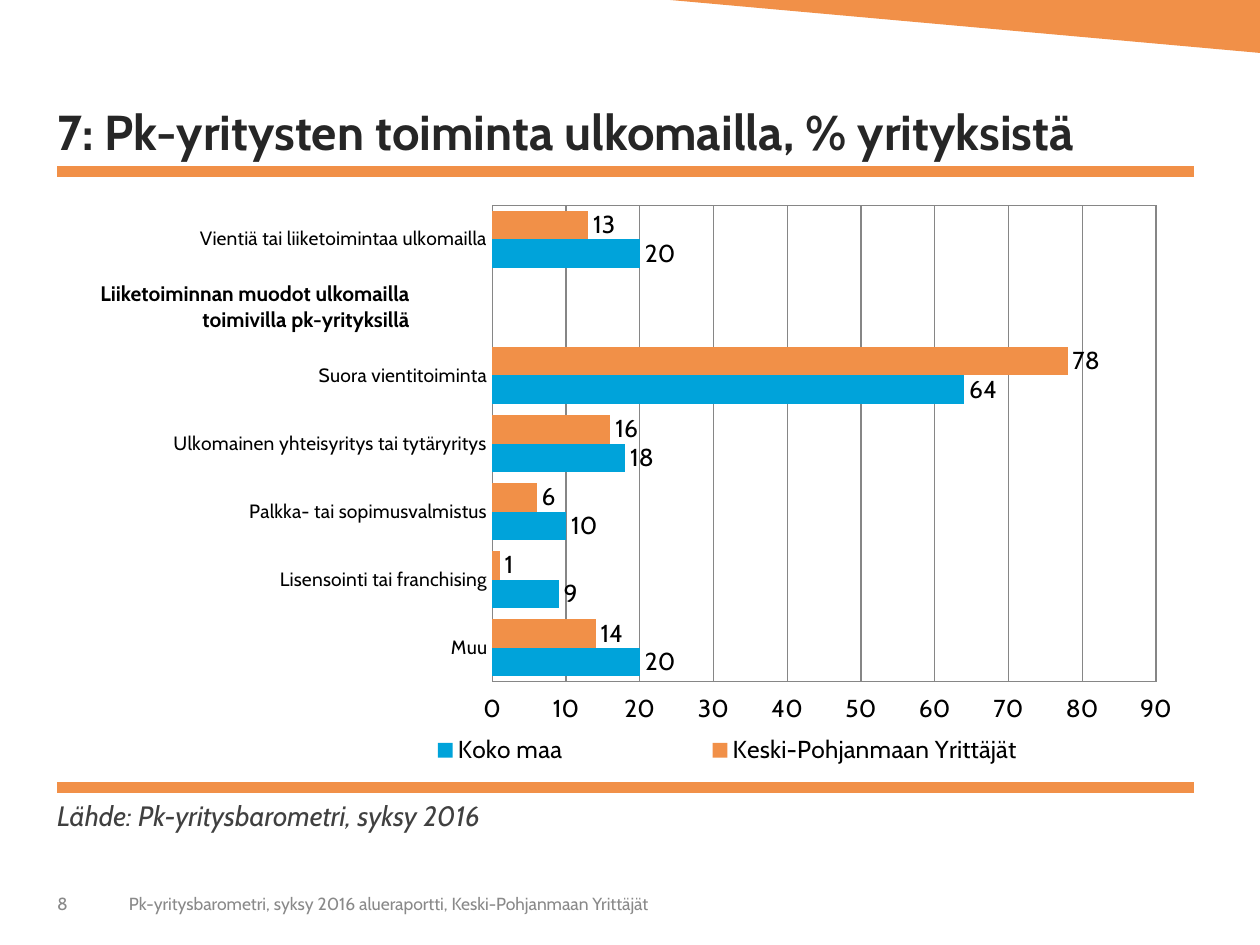
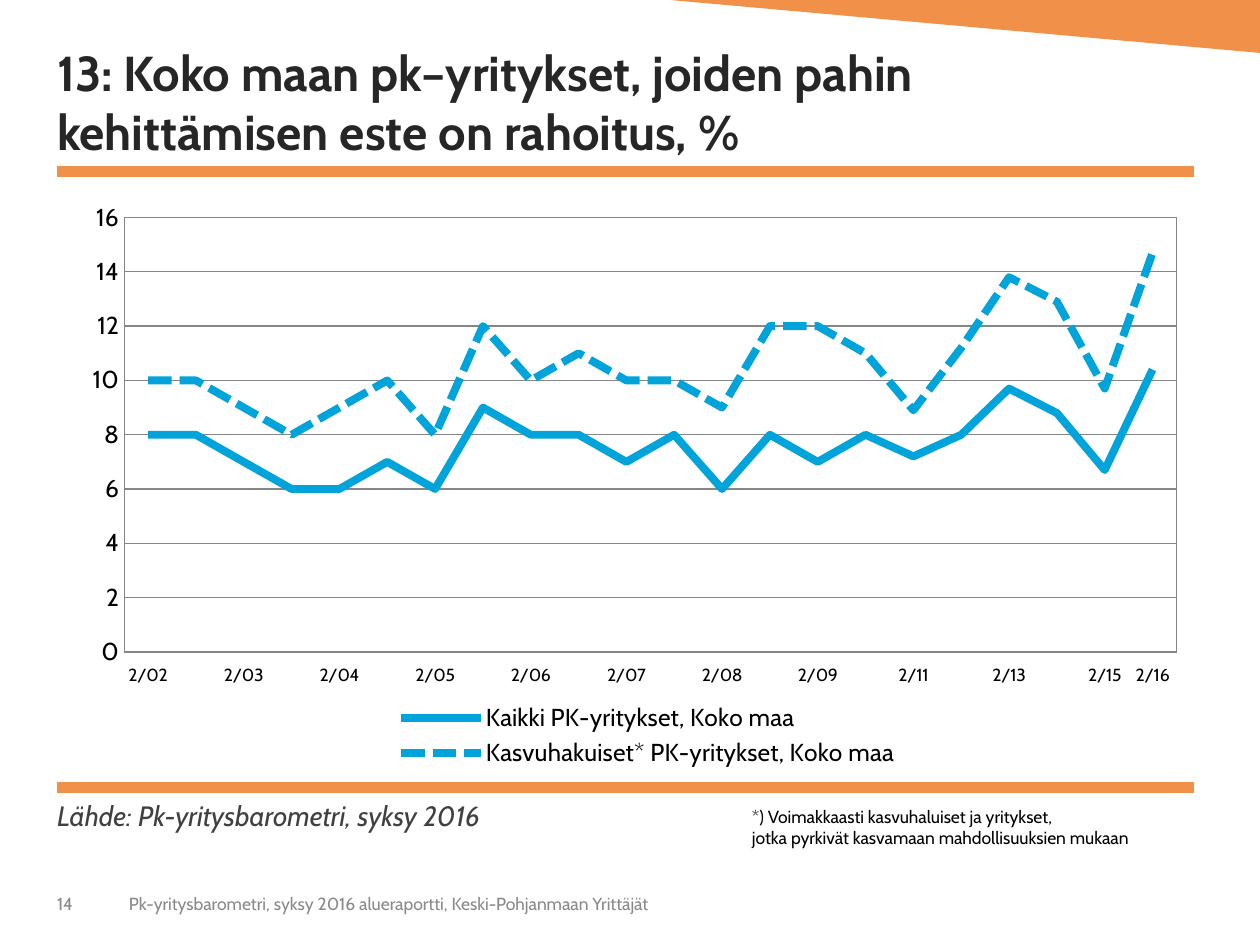
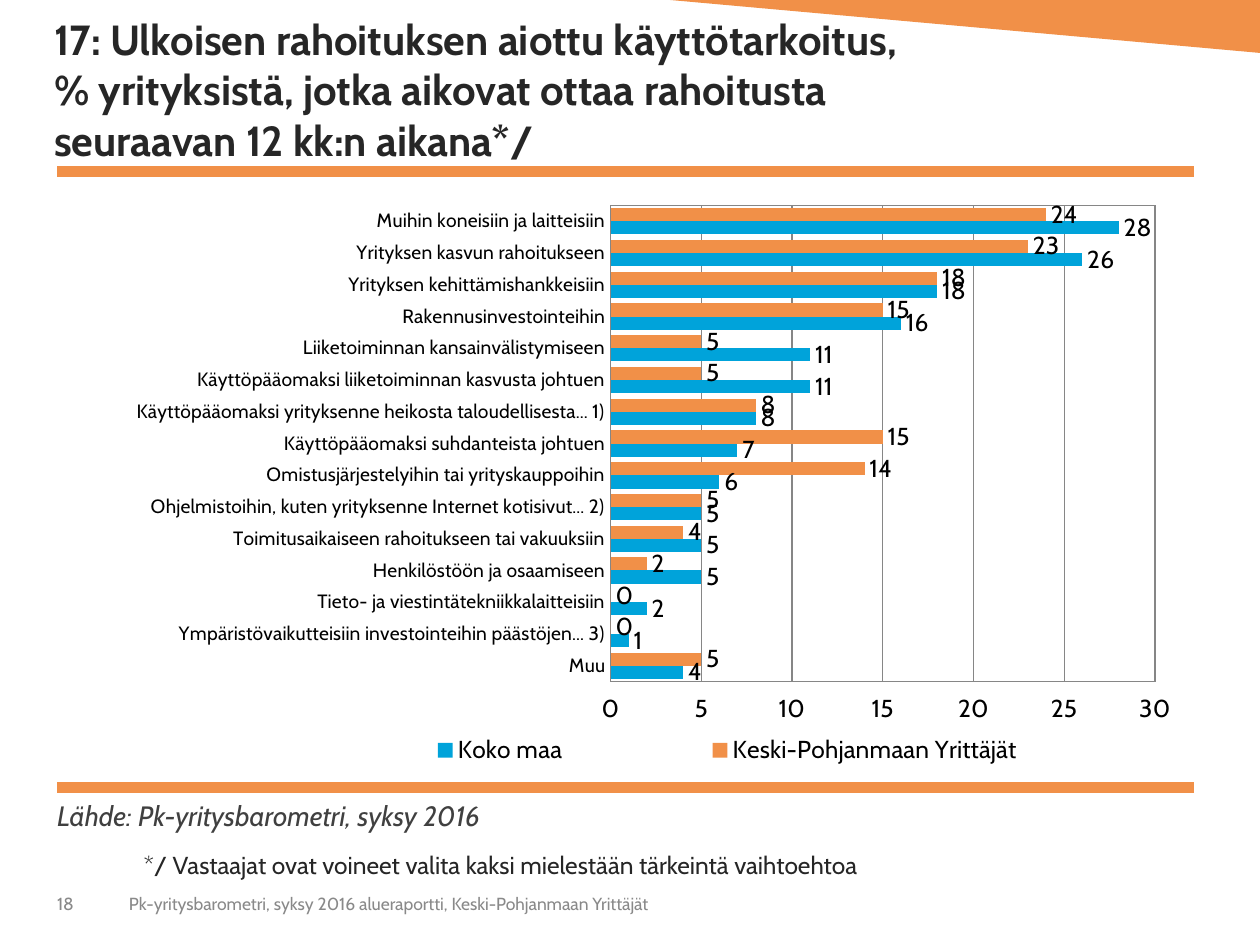
from lxml import etree
from pptx import Presentation
from pptx.chart.data import CategoryChartData
from pptx.dml.color import RGBColor
from pptx.enum.chart import (XL_CHART_TYPE, XL_LABEL_POSITION, XL_LEGEND_POSITION,
                             XL_TICK_LABEL_POSITION, XL_TICK_MARK)
from pptx.enum.dml import MSO_LINE
from pptx.enum.shapes import MSO_CONNECTOR
from pptx.enum.text import MSO_ANCHOR, PP_ALIGN
from pptx.oxml import parse_xml
from pptx.oxml.ns import nsdecls, qn
from pptx.util import Inches, Pt

ORANGE = RGBColor(0xF1, 0x90, 0x48)
BLUE = RGBColor(0x00, 0xA3, 0xDA)
TITLE = RGBColor(0x26, 0x26, 0x26)
SOURCE = RGBColor(0x40, 0x40, 0x40)
FOOTER = RGBColor(0x89, 0x89, 0x89)
GRID = RGBColor(0x86, 0x86, 0x86)
BLACK = RGBColor(0, 0, 0)
FONT = "Cabin"

# The slide is a grid of 100 columns and 100 rows
COL, ROW = Inches(0.1), Inches(0.075)
LEFT, WIDTH = 4.53, 90.2
RULES = (18.13, 83.33)
REGION, COUNTRY = "Keski-Pohjanmaan Yrittäjät", "Koko maa"
INSETS = (0.1, 0.05, 0.1, 0.05)


def add_text(s, box, lines, size, color, anchor=MSO_ANCHOR.TOP, align=PP_ALIGN.LEFT,
             insets=INSETS, **style):
    x, y, w, h = box
    tb = s.shapes.add_textbox(int(x * COL), int(y * ROW), int(w * COL), int(h * ROW))
    tf = tb.text_frame
    tf.word_wrap, tf.vertical_anchor = True, anchor
    for side, inset in zip(("left", "top", "right", "bottom"), insets):
        setattr(tf, f"margin_{side}", Inches(inset))
    for i, line in enumerate(lines):
        p = tf.add_paragraph() if i else tf.paragraphs[0]
        p.text, p.alignment = line, align
        for r in p.runs:
            r.font.color.rgb = color
            for key, value in {"name": FONT, "size": Pt(size), **style}.items():
                setattr(r.font, key, value)


def layout_xml(x, y, w, h, target=""):
    return parse_xml(
        f'<c:layout {nsdecls("c")}><c:manualLayout>{target}'
        '<c:xMode val="edge"/><c:yMode val="edge"/>'
        f'<c:x val="{x}"/><c:y val="{y}"/><c:w val="{w}"/><c:h val="{h}"/>'
        '</c:manualLayout></c:layout>')


# Slide contents
slides = [
    {
        "number": "8",
        "title": "7: Pk-yritysten toiminta ulkomailla, % yrityksistä",
        "cats": ["Vientiä tai liiketoimintaa ulkomailla", "", "Suora vientitoiminta",
                 "Ulkomainen yhteisyritys tai tytäryritys",
                 "Palkka- tai sopimusvalmistus", "Lisensointi tai franchising", "Muu"],
        "series": {REGION: [13, None, 78, 16, 6, 1, 14],
                   COUNTRY: [20, None, 64, 18, 10, 9, 20]},
        "scale": (90, 10), "plot": (0.383, 0.012, 0.584, 0.82),
        "note": {"box": (2.8, 29.07, 30.7, 6.67), "size": 12, "color": BLACK,
                 "lines": ["Liiketoiminnan muodot ulkomailla", "toimivilla pk-yrityksillä"],
                 "align": PP_ALIGN.RIGHT, "bold": True},
    },
    {
        "number": "14", "line": True,
        "title": "13: Koko maan pk–yritykset, joiden pahin kehittämisen este on rahoitus, %",
        "cats": ["2/02", "", "2/03", "", "2/04", "", "2/05", "", "2/06", "", "2/07", "",
                 "2/08", "", "2/09", "", "2/11", "", "2/13", "", "2/15", "2/16"],
        "series": {
            "Kaikki PK-yritykset, Koko maa":
                [8, 8, 7, 6, 6, 7, 6, 9, 8, 8, 7, 8, 6, 8, 7, 8, 7.2, 8, 9.7, 8.8, 6.7, 10.4],
            "Kasvuhakuiset* PK-yritykset, Koko maa":
                [10, 10, 9, 8, 9, 10, 8, 12, 10, 11, 10, 10, 9, 12, 12, 11, 8.9, 11.2,
                 13.8, 12.9, 9.7, 14.7]},
        "scale": (16, 2), "plot": (0.059, 0.033, 0.926, 0.748),
        "note": {"box": (58.7, 84.67, 35.4, 5.87), "size": 10, "color": BLACK,
                 "lines": ["*) Voimakkaasti kasvuhaluiset ja yritykset,",
                           "jotka pyrkivät kasvamaan mahdollisuuksien mukaan"]},
    },
    {
        "number": "18", "title_at": (4.3, 4.88), "title_size": 24,
        "title": "17: Ulkoisen rahoituksen aiottu käyttötarkoitus,\v"
                 "% yrityksistä, jotka aikovat ottaa rahoitusta\v"
                 "seuraavan 12 kk:n aikana*/",
        "cats": ["Muihin koneisiin ja laitteisiin", "Yrityksen kasvun rahoitukseen",
                 "Yrityksen kehittämishankkeisiin", "Rakennusinvestointeihin",
                 "Liiketoiminnan kansainvälistymiseen",
                 "Käyttöpääomaksi liiketoiminnan kasvusta johtuen",
                 "Käyttöpääomaksi yrityksenne heikosta taloudellisesta... 1)",
                 "Käyttöpääomaksi suhdanteista johtuen",
                 "Omistusjärjestelyihin tai yrityskauppoihin",
                 "Ohjelmistoihin, kuten yrityksenne Internet kotisivut... 2)",
                 "Toimitusaikaiseen rahoitukseen tai vakuuksiin",
                 "Henkilöstöön ja osaamiseen", "Tieto- ja viestintätekniikkalaitteisiin",
                 "Ympäristövaikutteisiin investointeihin päästöjen... 3)", "Muu"],
        "series": {REGION: [24, 23, 18, 15, 5, 5, 8, 15, 14, 5, 4, 2, 0, 0, 5],
                   COUNTRY: [28, 26, 18, 16, 11, 11, 8, 7, 6, 5, 5, 5, 2, 1, 4]},
        "scale": (30, 5), "plot": (0.487, 0.012, 0.479, 0.82),
        "note": {"box": (11.4, 87.83, 65.4, 5.2), "size": 14, "color": TITLE,
                 "lines": ["*/ Vastaajat ovat voineet valita kaksi mielestään "
                           "tärkeintä vaihtoehtoa"],
                 "anchor": MSO_ANCHOR.BOTTOM, "insets": (0, 0, 0, 0)},
    },
]

prs = Presentation()
prs.slide_width, prs.slide_height = 100 * COL, 100 * ROW

for data in slides:
    s = prs.slides.add_slide(prs.slide_layouts[6])
    is_line = data.get("line", False)

    # Corner band and the two rules
    fb = s.shapes.build_freeform(int(53.2 * COL), 0)
    fb.add_line_segments([(100 * COL, 0), (100 * COL, int(5.6 * ROW))], close=True)
    band = fb.convert_to_shape()
    band.shadow.inherit = False
    band.fill.solid()
    band.fill.fore_color.rgb = ORANGE
    band.line.fill.background()
    for y in RULES:
        rule = s.shapes.add_connector(MSO_CONNECTOR.STRAIGHT, int(LEFT * COL), int(y * ROW),
                                      int((LEFT + WIDTH) * COL), int(y * ROW))
        rule.line.color.rgb, rule.line.width = ORANGE, Pt(6)
        etree.SubElement(rule._element.spPr, qn("a:effectLst"))

    # Chart with its series
    cd = CategoryChartData()
    cd.categories = data["cats"]
    for name, values in data["series"].items():
        cd.add_series(name, values)
    kind = XL_CHART_TYPE.LINE if is_line else XL_CHART_TYPE.BAR_CLUSTERED
    chart = s.shapes.add_chart(kind, int(LEFT * COL), int(21 * ROW), int(WIDTH * COL),
                               int(61.47 * ROW), cd).chart
    chart.has_title = False
    chart.font.name, chart.font.size, chart.font.color.rgb = FONT, Pt(18), BLACK
    plot = chart.plots[0]
    plot.vary_by_categories = False
    if is_line:
        for ser, dash in zip(plot.series, (MSO_LINE.SOLID, MSO_LINE.SQUARE_DOT)):
            ser.smooth = False
            ser.format.line.color.rgb, ser.format.line.width = BLUE, Pt(4.5)
            ser.format.line.dash_style = dash
    else:
        plot.gap_width, plot.overlap = 40, 0
        for ser, color in zip(plot.series, (ORANGE, BLUE)):
            ser.format.fill.solid()
            ser.format.fill.fore_color.rgb = color
            labels = ser.data_labels
            labels.show_value, labels.position = True, XL_LABEL_POSITION.OUTSIDE_END
            labels.number_format, labels.number_format_is_linked = "#,##0", False
            labels.font.size = Pt(14)

    # Axes
    cat, val = chart.category_axis, chart.value_axis
    for axis, size in ((cat, 10 if is_line else 11), (val, 14)):
        axis.major_tick_mark = axis.minor_tick_mark = XL_TICK_MARK.NONE
        axis.tick_labels.font.size = Pt(size)
        axis.format.line.color.rgb = GRID
    if is_line:
        cat.tick_label_position = XL_TICK_LABEL_POSITION.LOW
        skip = parse_xml(f'<c:tickLblSkip {nsdecls("c")} val="1"/>')
        cat._element.find(qn("c:noMultiLvlLbl")).addprevious(skip)
    else:
        cat.reverse_order = True
        val.tick_label_position = XL_TICK_LABEL_POSITION.HIGH
    val.minimum_scale = 0
    val.maximum_scale, val.major_unit = data["scale"]
    val.tick_labels.number_format = "General" if is_line else "0"
    val.tick_labels.number_format_is_linked = False
    val.has_major_gridlines = True
    val.major_gridlines.format.line.color.rgb = GRID

    # Plot area and legend placement
    chart.has_legend = True
    legend = chart.legend
    legend.position, legend.include_in_layout = XL_LEGEND_POSITION.RIGHT, False
    legend.font.size = Pt(14)
    area = chart._chartSpace.chart.plotArea
    for part in (area, legend._element):
        for default in part.findall(qn("c:layout")):
            part.remove(default)
    area.insert(0, layout_xml(*data["plot"], '<c:layoutTarget val="inner"/>'))
    area.append(parse_xml(
        f'<c:spPr {nsdecls("c", "a")}><a:noFill/><a:ln w="9525"><a:solidFill>'
        f'<a:srgbClr val="{GRID}"/></a:solidFill></a:ln></c:spPr>'))
    place = (0.22, 0.86, 0.6, 0.13) if is_line else (0.21, 0.91, 0.76, 0.08)
    legend._element.find(qn("c:legendPos")).addnext(layout_xml(*place))

    # Title, source, footer and note
    add_text(s, (*data.get("title_at", (LEFT, 4.4)), 89.5, 12.53), [data["title"]],
             data.get("title_size", 28), TITLE, MSO_ANCHOR.BOTTOM,
             insets=(0, 0, 0, 0), bold=True)
    add_text(s, (LEFT, 83.87, WIDTH, 5.73), ["Lähde: Pk-yritysbarometri, syksy 2016"],
             16, SOURCE, insets=(0, 0.05, 0, 0.05), italic=True)
    add_text(s, (9.25, 92.93, 47.9, 5.33),
             ["Pk-yritysbarometri, syksy 2016 alueraportti, Keski-Pohjanmaan Yrittäjät"],
             10, FOOTER, MSO_ANCHOR.MIDDLE)
    add_text(s, (LEFT, 92.93, 4.7, 5.33), [data["number"]], 10, FOOTER,
             MSO_ANCHOR.MIDDLE, insets=(0, 0.05, 0.1, 0.05))
    add_text(s, **data["note"])

prs.save("out.pptx")
